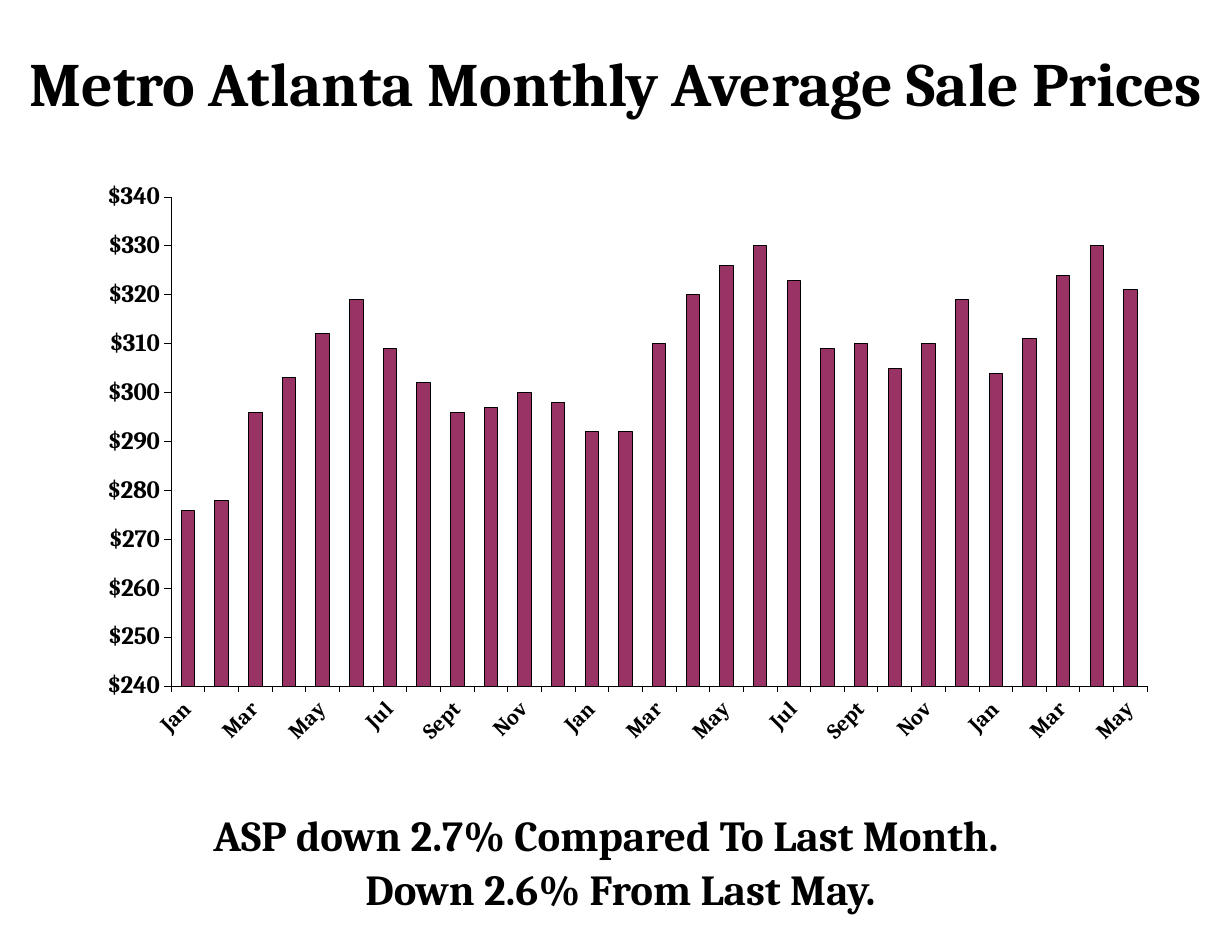
from dataclasses import dataclass

from lxml.etree import SubElement
from pptx import Presentation
from pptx.chart.data import CategoryChartData
from pptx.dml.color import RGBColor
from pptx.enum.chart import XL_CHART_TYPE, XL_TICK_LABEL_POSITION, XL_TICK_MARK
from pptx.enum.text import MSO_ANCHOR, PP_ALIGN
from pptx.oxml.ns import qn
from pptx.util import Inches, Pt


@dataclass(frozen=True)
class Theme:
    font: str = "Cambria"
    ink: RGBColor = RGBColor(0x00, 0x00, 0x00)
    bar: RGBColor = RGBColor(0x99, 0x33, 0x66)
    title: float = 39.6
    summary: float = 27.5
    value_label: float = 16
    month_label: float = 14
    hairline: float = 0.06


MONTHS = ["Jan", "Feb", "Mar", "Apr", "May", "Jun",
          "Jul", "Aug", "Sept", "Oct", "Nov", "Dec"]
PRICES = [276, 278, 296, 303, 312, 319, 309, 302, 296, 297, 300, 298,
          292, 292, 310, 320, 326, 330, 323, 309, 310, 305, 310, 319,
          304, 311, 324, 330, 321]
PLOT_AREA = {"x": 0.107, "y": 0.088, "w": 0.876, "h": 0.717}


class SlideBuilder:
    """Draws styled text and a price chart on one slide."""

    def __init__(self, page, theme):
        self.page = page
        self.theme = theme

    def style_font(self, font, size):
        font.name = self.theme.font
        font.size = Pt(size)
        font.bold = True
        font.color.rgb = self.theme.ink

    def add_text(self, lines, top, height, size, spacing=1.0, gap=0):
        box = self.page.shapes.add_textbox(0, Inches(top), Inches(11), Inches(height))
        frame = box.text_frame
        frame.word_wrap = True
        frame.vertical_anchor = MSO_ANCHOR.MIDDLE
        for index, (line, left, right) in enumerate(lines):
            para = frame.paragraphs[0] if index == 0 else frame.add_paragraph()
            para.text = line
            para.alignment = PP_ALIGN.CENTER
            para.line_spacing = spacing
            para.space_before = Pt(gap)
            self.style_font(para.font, size)
            properties = para._p.get_or_add_pPr()
            properties.set("marL", str(Inches(left)))
            properties.set("marR", str(Inches(right)))

    def style_axis(self, axis, size):
        axis.has_major_gridlines = False
        axis.major_tick_mark = XL_TICK_MARK.OUTSIDE
        axis.minor_tick_mark = XL_TICK_MARK.NONE
        axis.format.line.color.rgb = self.theme.ink
        axis.format.line.width = Pt(self.theme.hairline)
        self.style_font(axis.tick_labels.font, size)

    def place_plot(self, chart):
        plot_area = chart._chartSpace.chart.plotArea
        layout = plot_area.find(qn("c:layout"))
        if layout is None:
            layout = SubElement(plot_area, qn("c:layout"))
            plot_area.insert(0, layout)
        manual = SubElement(layout, qn("c:manualLayout"))
        settings = {"layoutTarget": "inner", "xMode": "edge", "yMode": "edge", **PLOT_AREA}
        for name, value in settings.items():
            SubElement(manual, qn(f"c:{name}")).set("val", str(value))

    def add_price_chart(self, prices):
        data = CategoryChartData()
        data.categories = [MONTHS[index % 12] for index in range(len(prices))]
        data.add_series("Series 1", prices)
        chart = self.page.shapes.add_chart(
            XL_CHART_TYPE.COLUMN_CLUSTERED,
            Inches(0.46), Inches(1.22), Inches(9.95), Inches(6.09), data).chart
        chart.has_legend = False
        chart.has_title = False
        self.style_font(chart.font, self.theme.month_label)
        self.place_plot(chart)

        plot = chart.plots[0]
        plot.gap_width = 150
        plot.vary_by_categories = False
        bars = plot.series[0].format
        bars.fill.solid()
        bars.fill.fore_color.rgb = self.theme.bar
        bars.line.color.rgb = self.theme.ink
        bars.line.width = Pt(self.theme.hairline)

        values = chart.value_axis
        self.style_axis(values, self.theme.value_label)
        values.minimum_scale, values.maximum_scale, values.major_unit = 240, 340, 10
        values.tick_labels.number_format = '"$"#,##0'
        values.tick_labels.number_format_is_linked = False

        months = chart.category_axis
        self.style_axis(months, self.theme.month_label)
        months.tick_label_position = XL_TICK_LABEL_POSITION.LOW
        months._element.txPr.find(qn("a:bodyPr")).set("rot", "-2700000")
        skip = SubElement(months._element, qn("c:tickLblSkip"))
        skip.set("val", "2")
        months._element.find(qn("c:noMultiLvlLbl")).addprevious(skip)


def main():
    deck = Presentation()
    deck.slide_width, deck.slide_height = Inches(11), Inches(8.5)
    theme = Theme()
    slide = SlideBuilder(deck.slides.add_slide(deck.slide_layouts[6]), theme)
    slide.add_text([("Metro Atlanta Monthly Average Sale Prices", 0, 0)],
                   0.5, 0.46, theme.title)
    slide.add_price_chart(PRICES)
    slide.add_text([("ASP down 2.7% Compared To Last Month.", 0, 0.18),
                    ("Down 2.6% From Last May.", 0.08, 0)],
                   7.17, 1.1, theme.summary, spacing=0.9, gap=5.5)
    deck.save("out.pptx")


if __name__ == "__main__":
    main()
